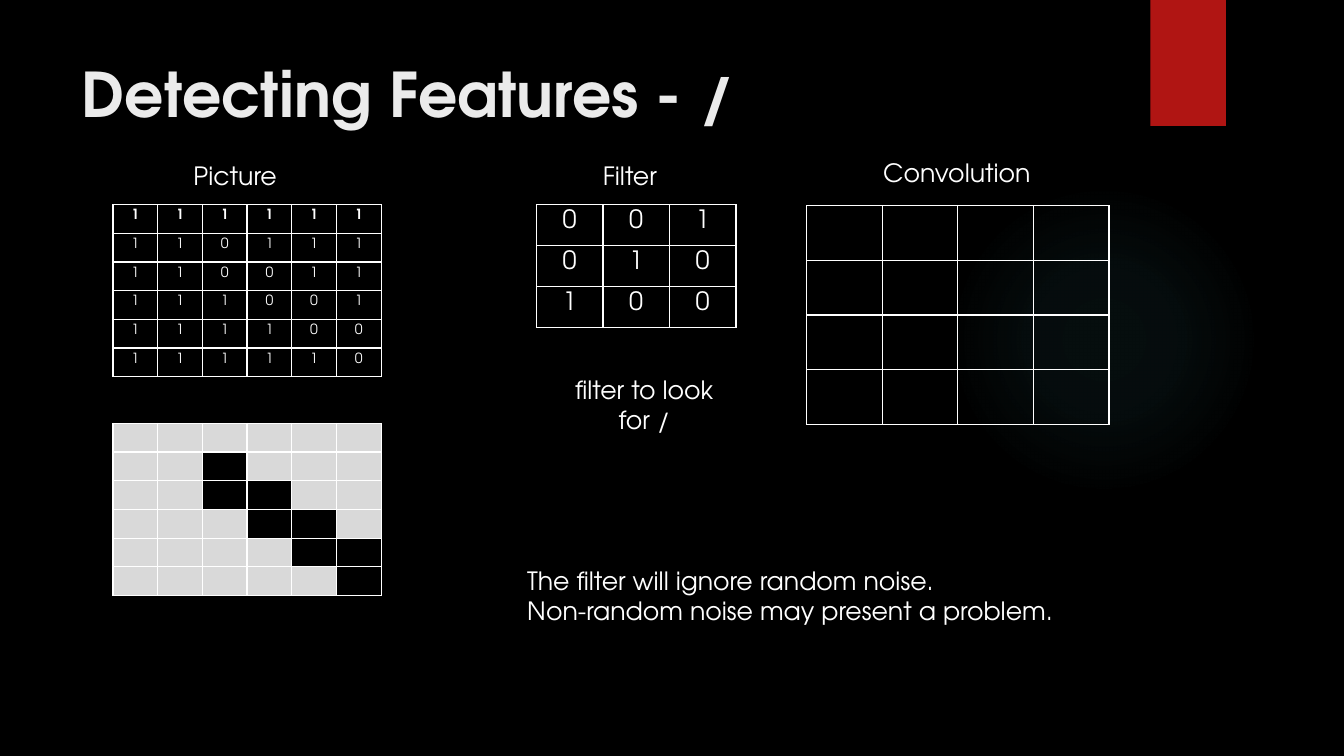
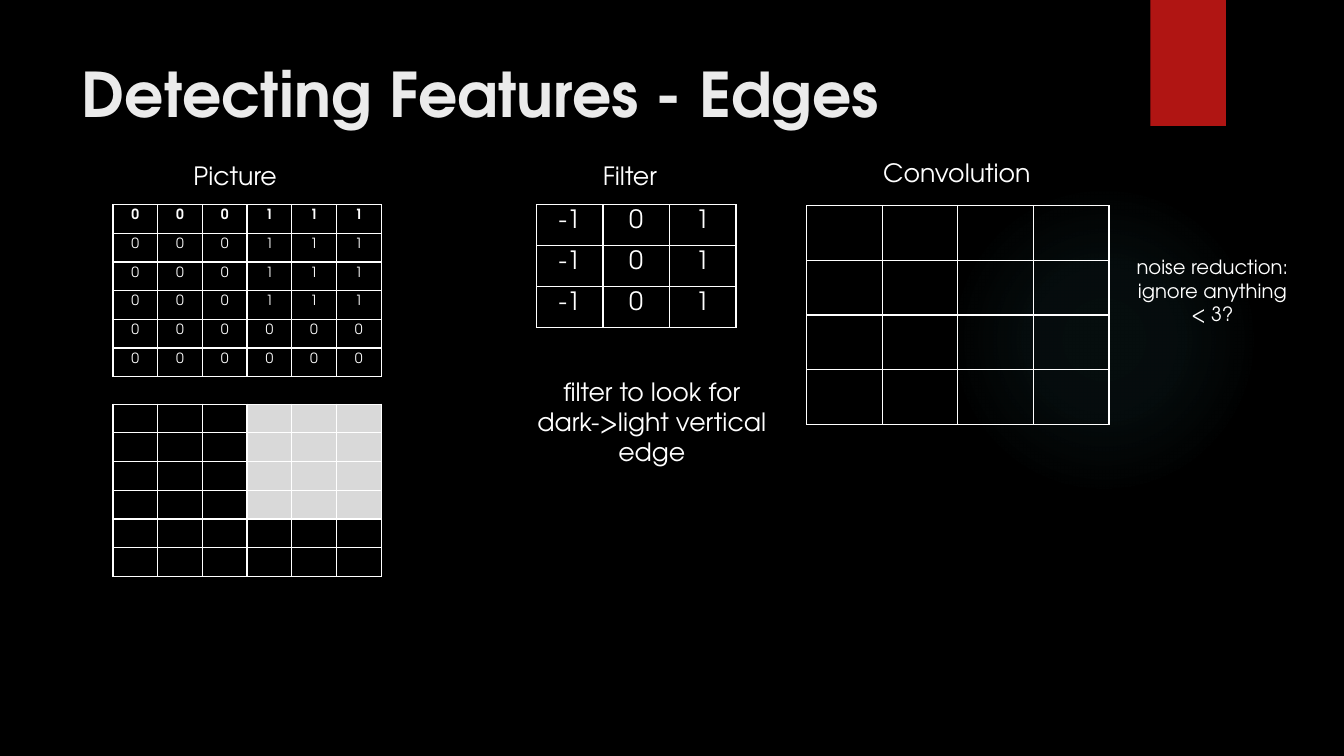
"""Build two slides on detecting image features with convolution filters."""
from lxml.etree import SubElement
from pptx import Presentation
from pptx.dml.color import RGBColor
from pptx.enum.shapes import MSO_SHAPE as Shape
from pptx.enum.text import MSO_ANCHOR as Anchor, MSO_AUTO_SIZE as AutoSize, PP_ALIGN as Align
from pptx.oxml import parse_xml
from pptx.oxml.ns import nsdecls, qn
from pptx.util import Inches, Pt

FONT = "TeX Gyre Adventor"
COLORS = {"back": "000000", "text": "FFFFFF", "title": "EBEBEB",
          "ribbon": "B01513", "glow": "50B9C1", "light": "D9D9D9"}
GLOW_STOPS = [(0, 7), (36, 6), (69, 0)]

PICTURE_SIZE = (2.66, 1.71)
PICTURE_LEFT, TABLE_TOP = 1.12, 2.03
FILTER_AT = (5.32, TABLE_TOP, 1.98, 1.22)
CONVOLUTION_AT = (8, 2.04, 3, 2.17)
CONVOLUTION = [[""] * 4] * 4
HEADINGS = [("Picture", (1.82, 1.54, 1.05, 0.4)),
            ("Filter", (5.88, 1.54, 0.75, 0.4)),
            ("Convolution", (8.66, 1.51, 1.69, 0.4))]

SLIDES = [
    {"title": "Detecting Features - /",
     "picture": ["111111", "110111", "110011", "111001", "111100", "111110"],
     "filter": ["001", "010", "100"],
     "shades_top": 4.2,
     "notes": [
         (["filter to look", "for /"], (5.55, 3.66, 1.68, 0.71), {"align": Align.CENTER}),
         (["The filter will ignore random noise.",
           "Non-random noise may present a problem."], (5.13, 5.56, 5.49, 0.71), {})]},
    {"title": "Detecting Features - Edges",
     "picture": ["000111"] * 4 + ["000000"] * 2,
     "filter": [["-1", "0", "1"]] * 3,
     "shades_top": 4.01,
     "notes": [
         (["noise reduction:", "ignore anything", "< 3?"], (11.15, 2.48, 1.75, 0.8),
          {"align": Align.CENTER, "size": 14}),
         (["filter to look for", "dark->light vertical", "edge"], (5.23, 3.68, 2.47, 1.01),
          {"align": Align.CENTER})]},
]


def color(name):
    return RGBColor.from_string(COLORS[name])


def inches(lengths):
    return [Inches(length) for length in lengths]


def write(frame, lines, size=18, align=Align.LEFT, ink="text", bold=False):
    for index, line in enumerate(lines):
        para = frame.add_paragraph() if index else frame.paragraphs[0]
        para.alignment = align
        if not line:
            SubElement(para._p, qn("a:endParaRPr"), sz=str(size * 100))
            continue
        span = para.add_run()
        span.text = line
        font = span.font
        font.name, font.size, font.bold = FONT, Pt(size), bold
        font.color.rgb = color(ink)


def add_text(page, lines, at, **style):
    box = page.shapes.add_textbox(*inches(at))
    box.text_frame.word_wrap = False
    box.text_frame.auto_size = AutoSize.SHAPE_TO_FIT_TEXT
    write(box.text_frame, lines, **style)


def add_borders(cell):
    properties = cell._tc.get_or_add_tcPr()
    for side in ("lnL", "lnR", "lnT", "lnB"):
        line = SubElement(properties, qn(f"a:{side}"), w=str(Pt(1)))
        fill = SubElement(line, qn("a:solidFill"))
        SubElement(fill, qn("a:srgbClr"), val=COLORS["text"])


def add_grid(page, values, at, size=18, bold_header=False, shades=None):
    rows, columns = len(values), len(values[0])
    table = page.shapes.add_table(rows, columns, *inches(at)).table
    table.first_row = table.horz_banding = False
    for column in table.columns:
        column.width = Inches(at[2] / columns)
    for row in table.rows:
        row.height = Inches(at[3] / rows)
    for row, line in enumerate(values):
        for column, value in enumerate(line):
            cell = table.cell(row, column)
            add_borders(cell)
            if shades:
                cell.fill.solid()
                cell.fill.fore_color.rgb = color(shades[value])
            else:
                cell.fill.background()
            write(cell.text_frame, ["" if shades else value], size=size,
                  align=Align.CENTER, bold=bold_header and row == 0)


def add_shape(page, kind, at):
    shape = page.shapes.add_shape(kind, *inches(at))
    shape.shadow.inherit = False
    shape.line.fill.background()
    return shape


def decorate(page):
    glow = add_shape(page, Shape.OVAL, (9.41, 1.83, 3.08, 3.08))
    glow.fill.background()
    stops = "".join(
        f'<a:gs pos="{place * 1000}"><a:srgbClr val="{COLORS["glow"]}">'
        f'<a:alpha val="{alpha * 1000}"/></a:srgbClr></a:gs>' for place, alpha in GLOW_STOPS)
    gradient = parse_xml(
        f'<a:gradFill {nsdecls("a")}><a:gsLst>{stops}</a:gsLst><a:path path="circle">'
        '<a:fillToRect l="50000" t="50000" r="50000" b="50000"/></a:path></a:gradFill>')
    properties = glow._element.spPr
    properties.replace(properties.find(qn("a:noFill")), gradient)
    ribbon = add_shape(page, Shape.RECTANGLE, (11.41, 0, 0.75, 1.25))
    ribbon.fill.solid()
    ribbon.fill.fore_color.rgb = color("ribbon")


def add_title(page, text):
    title = page.shapes.title
    title.left, title.top, title.width, title.height = inches((0.71, 0.5, 10.29, 1.53))
    frame = title.text_frame
    frame.word_wrap, frame.auto_size = True, AutoSize.NONE
    frame.vertical_anchor = Anchor.TOP
    write(frame, [text], size=44, ink="title", bold=True)


def build_slide(deck, content):
    page = deck.slides.add_slide(deck.slide_layouts[5])
    decorate(page)
    add_title(page, content["title"])
    picture = content["picture"]
    add_grid(page, picture, (PICTURE_LEFT, TABLE_TOP, *PICTURE_SIZE), size=10, bold_header=True)
    add_grid(page, picture, (PICTURE_LEFT, content["shades_top"], *PICTURE_SIZE), size=10,
             shades={"0": "back", "1": "light"})
    add_grid(page, content["filter"], FILTER_AT)
    add_grid(page, CONVOLUTION, CONVOLUTION_AT)
    for heading, at in HEADINGS:
        add_text(page, [heading], at)
    for lines, at, style in content["notes"]:
        add_text(page, lines, at, **style)


def main():
    deck = Presentation()
    deck.slide_width, deck.slide_height = inches((13.33, 7.5))
    backdrop = deck.slide_master.background.fill
    backdrop.solid()
    backdrop.fore_color.rgb = color("back")
    for content in SLIDES:
        build_slide(deck, content)
    deck.save("out.pptx")


if __name__ == "__main__":
    main()
